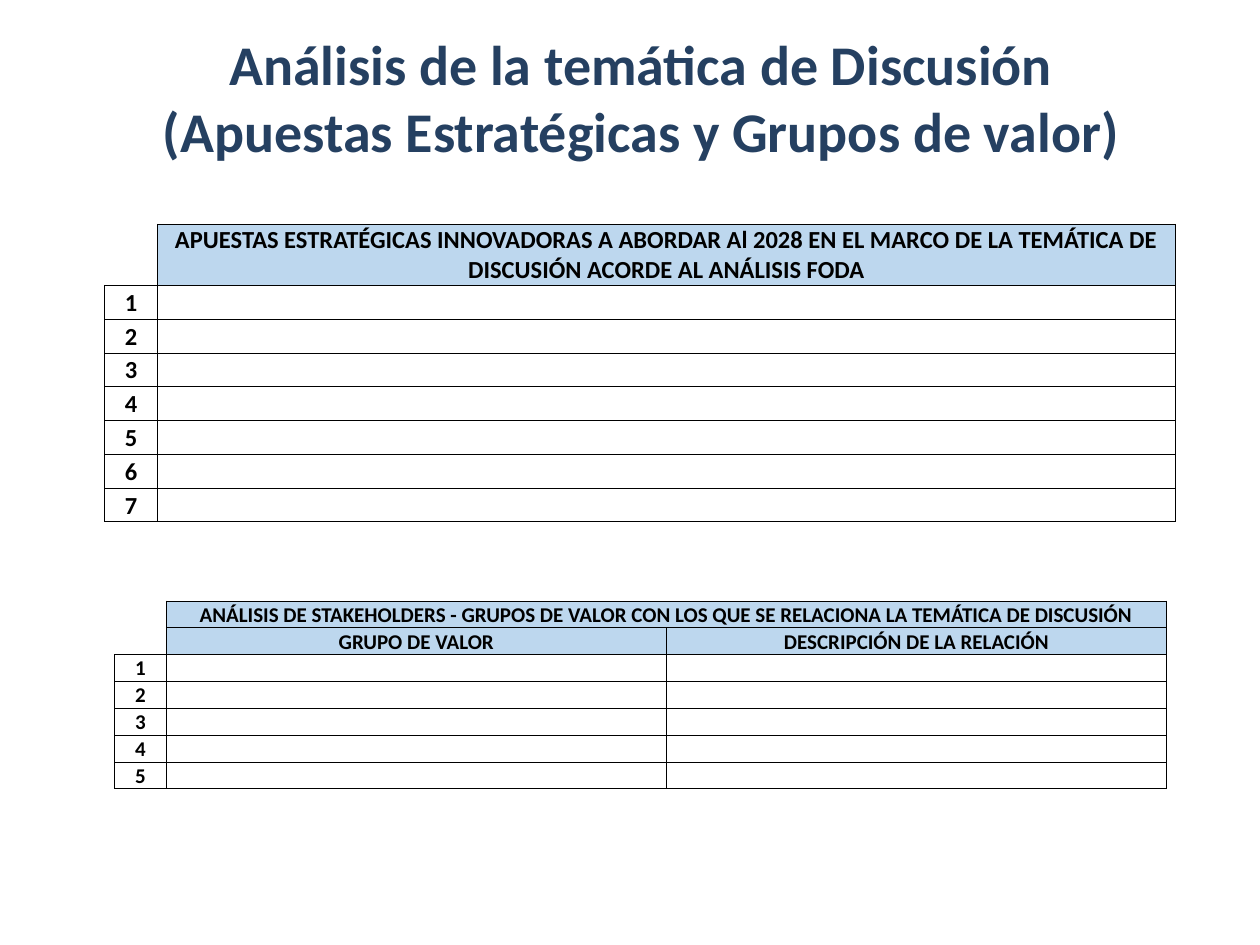
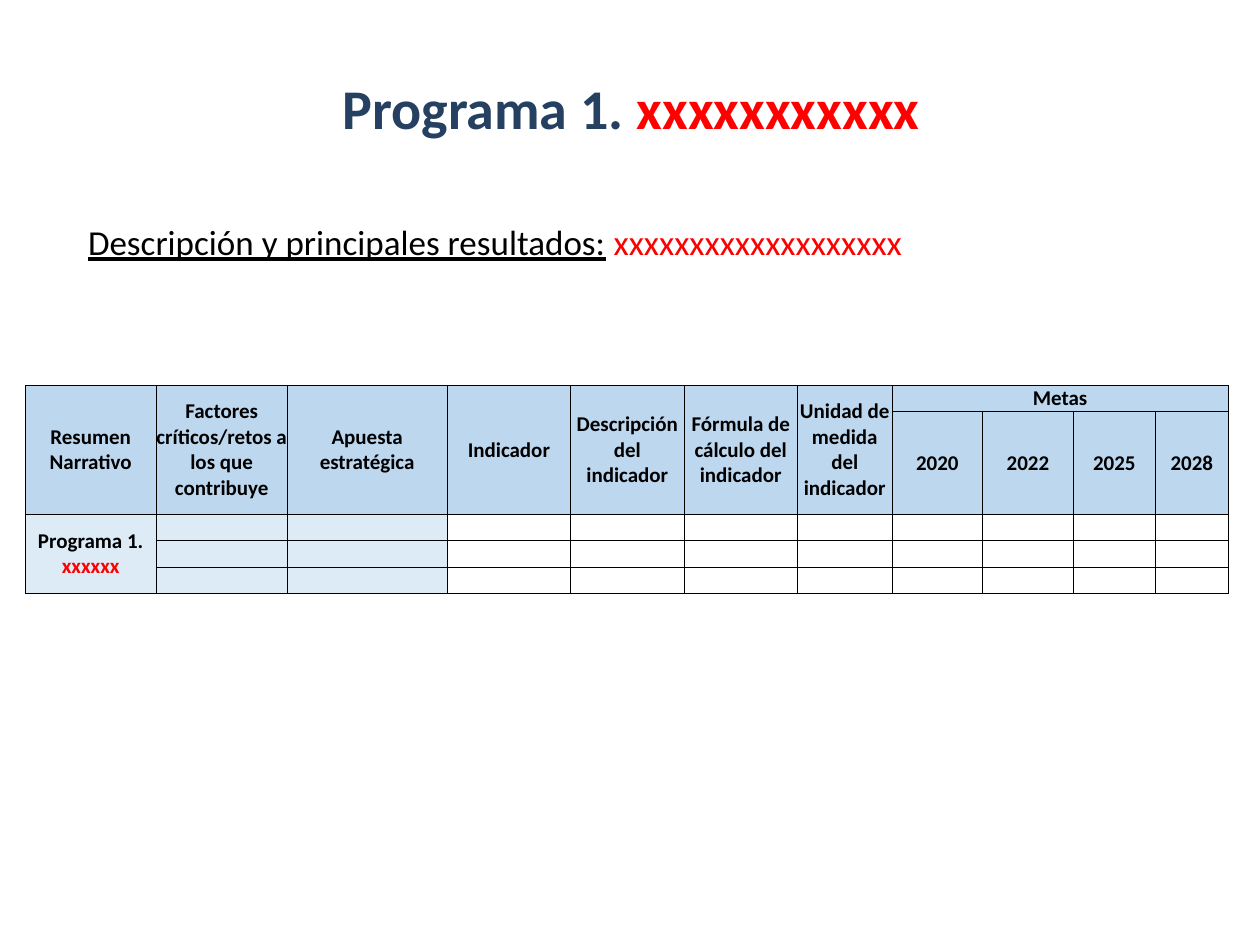
"""Build two planning slides with titles and bordered worksheet tables."""
from lxml import etree
from pptx import Presentation
from pptx.dml.color import RGBColor
from pptx.enum.text import MSO_ANCHOR, PP_ALIGN
from pptx.oxml.ns import qn
from pptx.util import Inches, Pt

CENTER, LEFT = PP_ALIGN.CENTER, PP_ALIGN.LEFT
MIDDLE, TOP = MSO_ANCHOR.MIDDLE, MSO_ANCHOR.TOP
NAVY = RGBColor(0x25, 0x40, 0x61)
BLACK = RGBColor(0, 0, 0)
RED = RGBColor(0xFF, 0, 0)
WHITE = RGBColor(0xFF, 0xFF, 0xFF)
HEADER = RGBColor(0xBD, 0xD7, 0xEE)
PALE = RGBColor(0xDD, 0xEB, 0xF7)
TITLE = {"name": "Calibri", "size": Pt(32), "bold": True}
BODY = {"name": "Calibri", "size": Pt(20), "bold": False}
CELL_LARGE = {"name": "Calibri", "size": Pt(14), "bold": True}
CELL = {"name": "Calibri", "size": Pt(12), "bold": True}

prs = Presentation()
prs.slide_width, prs.slide_height = Inches(10), Inches(7.5)
PX, PY = prs.slide_width / 100, prs.slide_height / 100


def write(tf, runs, style, align=CENTER):
    """Write (text, colour, underline) runs; a line feed becomes a line break."""
    p = tf.paragraphs[0]
    p.alignment = align
    for text, color, underline in runs:
        if text == "\n":
            p.add_line_break()
            continue
        r = p.add_run()
        r.text = text
        for key, value in style.items():
            setattr(r.font, key, value)
        r.font.underline = underline
        r.font.color.rgb = color


def grid(s, left, top, cols, rows, cells, fills, spans, style, margin, corners=0):
    """Add a table in percent of the slide; the first corner cells stay open."""
    frame = s.shapes.add_table(len(rows), len(cols), round(left * PX), round(top * PY),
                               round(sum(cols) * PX), round(sum(rows) * PY))
    table = frame.table
    table.first_row = table.horz_banding = False
    for column, width in zip(table.columns, cols):
        column.width = round(width * PX)
    for row, height in zip(table.rows, rows):
        row.height = round(height * PY)
    for i in range(len(rows)):
        for j in range(len(cols)):
            cell = table.cell(i, j)
            cell.margin_left = cell.margin_right = cell.margin_top = Inches(margin)
            cell.margin_bottom = 0
            cell.vertical_anchor = MIDDLE
            corner = j == 0 and i < corners
            drawn = "LRTB" if not corner else "RB" if i == corners - 1 else "R"
            for side in "LRTB":
                ln = etree.SubElement(cell._tc.get_or_add_tcPr(), qn("a:ln" + side), w="6350")
                if side in drawn:
                    fill = etree.SubElement(ln, qn("a:solidFill"))
                    etree.SubElement(fill, qn("a:srgbClr"), val=str(BLACK))
                else:
                    etree.SubElement(ln, qn("a:noFill"))
            cell.fill.solid()
            cell.fill.fore_color.rgb = fills.get((i, j), WHITE)
            if (i, j) in cells:
                write(cell.text_frame, cells[i, j], style)
            else:
                etree.SubElement(cell.text_frame.paragraphs[0]._p, qn("a:endParaRPr"), sz="1000")
    for first, last in spans:
        table.cell(*first).merge(table.cell(*last))


slides = [
    [((5.9, 4.8, 90, 10.93), TITLE, CENTER, MIDDLE,
      [("Análisis de la temática de Discusión", NAVY, False), ("\n", NAVY, False),
       ("(Apuestas Estratégicas y Grupos de valor)", NAVY, False)])],
    [((5.1, 5.87, 90, 10.93), TITLE, CENTER, MIDDLE,
      [("Programa 1. ", NAVY, False), ("xxxxxxxxxxx", RED, False)]),
     ((6, 22.67, 86.2, 12.53), BODY, LEFT, TOP,
      [("Descripción y principales resultados:", BLACK, True),
       (" xxxxxxxxxxxxxxxxxxx", RED, False)])],
]
for texts in slides:
    s = prs.slides.add_slide(prs.slide_layouts[6])
    for (x, y, w, h), style, align, anchor, runs in texts:
        sp = s.shapes.add_textbox(round(x * PX), round(y * PY), round(w * PX), round(h * PY))
        tf = sp.text_frame
        tf.word_wrap = True
        tf.vertical_anchor = anchor
        write(tf, runs, style, align)

analysis, program = prs.slides

cells = {(n, 0): [(str(n), BLACK, False)] for n in range(1, 8)}
cells[0, 1] = [("APUESTAS ESTRATÉGICAS INNOVADORAS A ABORDAR Al 2028 EN EL MARCO DE LA "
                "TEMÁTICA DE DISCUSIÓN ACORDE AL ANÁLISIS FODA", BLACK, False)]
grid(analysis, 8.3, 23.73, [4.2, 80.8], [6.47] + [3.58] * 7, cells,
     {(0, 1): HEADER}, [], CELL_LARGE, 0.01, corners=1)

cells = {(n + 1, 0): [(str(n), BLACK, False)] for n in range(1, 6)}
cells[0, 1] = [("ANÁLISIS DE STAKEHOLDERS - GRUPOS DE VALOR CON LOS QUE SE RELACIONA "
                "LA TEMÁTICA DE DISCUSIÓN", BLACK, False)]
cells[1, 1] = [("GRUPO DE VALOR", BLACK, False)]
cells[1, 2] = [("DESCRIPCIÓN DE LA RELACIÓN", BLACK, False)]
grid(analysis, 9.1, 63.6, [4.1, 39.7, 39.7], [2.84] * 7, cells,
     {(i, j): HEADER for i in (0, 1) for j in (1, 2)}, [((0, 1), (0, 2))],
     CELL, 0.01, corners=2)

headings = ["Resumen Narrativo", "Factores críticos/retos a los que contribuye",
            "Apuesta estratégica", "Indicador", "Descripción del indicador",
            "Fórmula de cálculo del indicador", "Unidad de medida del indicador", "Metas"]
years = ["2020", "2022", "2025", "2028"]
cells = {(0, j): [(text, BLACK, False)] for j, text in enumerate(headings)}
cells.update({(1, j): [(year, BLACK, False)] for j, year in enumerate(years, 7)})
cells[2, 0] = [("Programa 1. ", BLACK, False), ("xxxxxx", RED, False)]
fills = {(i, j): HEADER for i in range(2) for j in range(11)}
fills.update({(i, j): PALE for i in range(2, 5) for j in range(3)})
spans = [((0, j), (1, j)) for j in range(7)] + [((0, 7), (0, 10)), ((2, 0), (4, 0))]
grid(program, 2, 40.8, [10.4, 10.4, 12.7, 9.8, 9, 9, 7.5, 7.2, 7.2, 6.5, 5.8],
     [2.75, 10.9] + [2.79] * 3, cells, fills, spans, CELL, 0)

prs.save("out.pptx")
